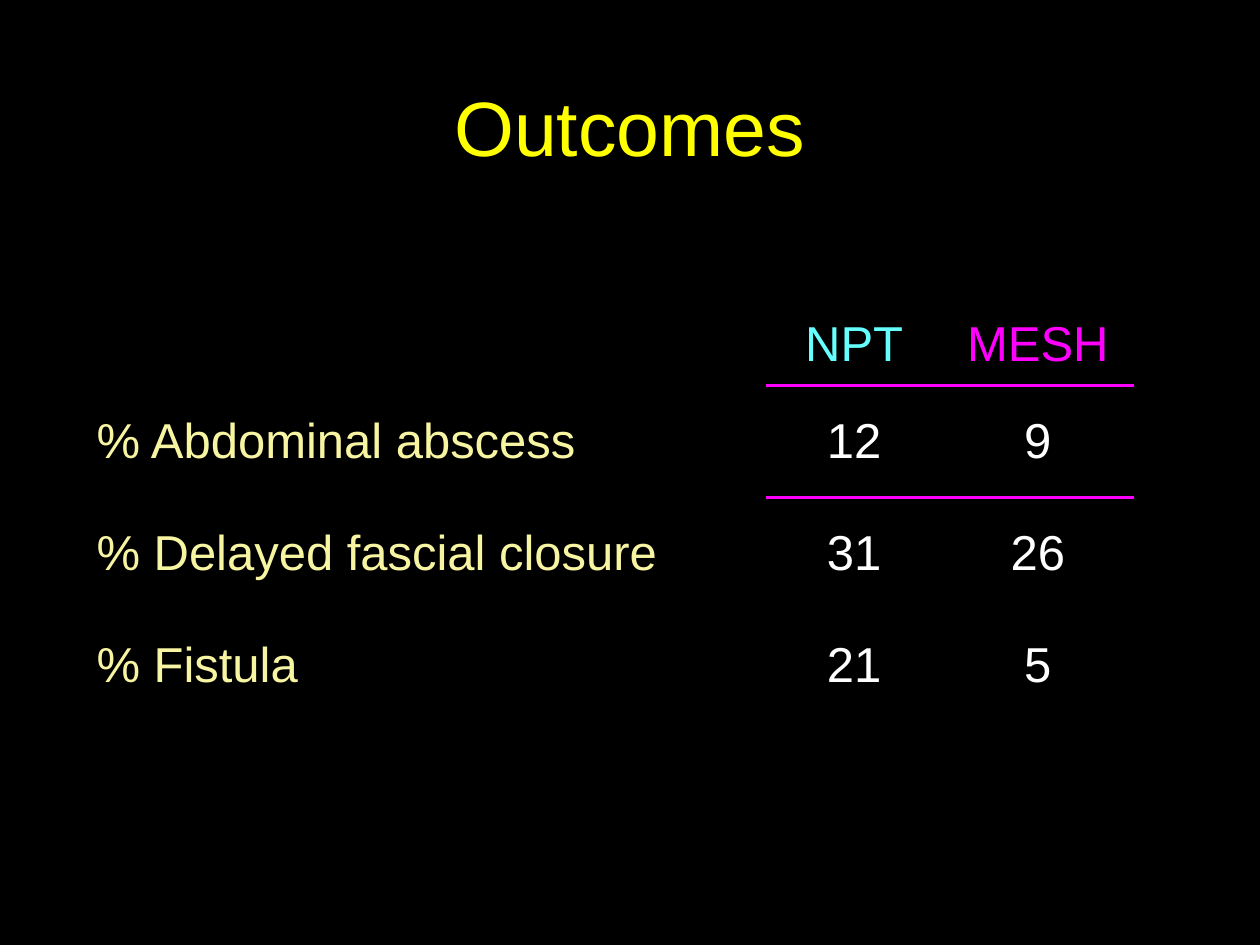
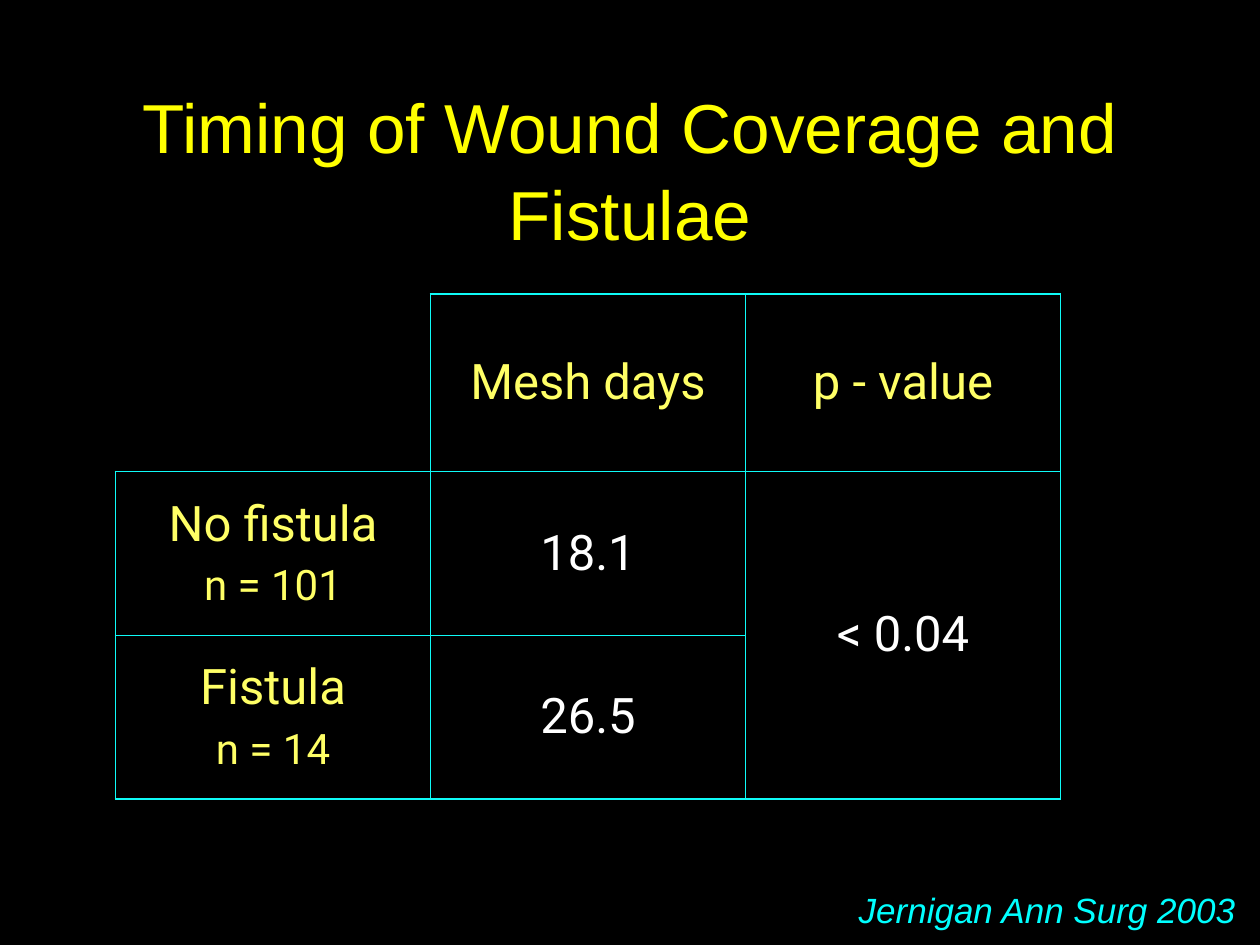
from lxml import etree
from pptx import Presentation
from pptx.dml.color import RGBColor
from pptx.enum.text import MSO_ANCHOR, PP_ALIGN
from pptx.oxml.ns import qn
from pptx.util import Inches, Pt

LEFT, CENTER = PP_ALIGN.LEFT, PP_ALIGN.CENTER
TOP, MIDDLE = MSO_ANCHOR.TOP, MSO_ANCHOR.MIDDLE

COLORS = {
    "background": "000000",
    "title": "FFFF00",
    "npt": "66FFFF",
    "mesh": "FF00FF",
    "outcome": "F8F5A2",
    "heading": "FFFF66",
    "value": "FFFFFF",
    "grid": "0FFBF7",
    "citation": "00FFFF",
}
FONT = "Arial"
TABLE_FONT = "Roboto"
PLAIN_TABLE_STYLE = "{2D5ABB26-0587-4C30-8999-92F81FD0307C}"
ALL_SIDES = "LRTB"
BLANK_LAYOUT = 6


def grid(units):
    return Inches(units / 12)


def write_text(frame, text, size=28, color="value", font=FONT, align=CENTER,
               italic=False, anchor=MIDDLE, line_spacing=None, small_size=24):
    frame.vertical_anchor = anchor
    for index, line in enumerate(text.split("\n")):
        paragraph = frame.add_paragraph() if index else frame.paragraphs[0]
        paragraph.alignment = align
        paragraph.line_spacing = line_spacing
        line_size = small_size if index else size
        paragraph.space_before = Pt(round(0.2 * line_size) if index else 0)
        run = paragraph.add_run()
        run.text = line
        run.font.name = font
        run.font.size = Pt(line_size)
        run.font.italic = italic
        run.font.color.rgb = RGBColor.from_string(COLORS[color])


def add_text(slide, text, left, top, width, height, wrap=True, **text_format):
    shape = slide.shapes.add_textbox(*map(grid, (left, top, width, height)))
    shape.text_frame.word_wrap = wrap
    write_text(shape.text_frame, text, **text_format)
    return shape


def add_title(slide, text, left, top, width, size, **text_format):
    shape = add_text(slide, text, left, top, width, 15, size=size,
                     color="title", **text_format)
    frame = shape.text_frame
    frame.margin_left = frame.margin_right = Inches(0.2)
    frame.margin_top = Inches(0.12)


def add_slide(presentation):
    slide = presentation.slides.add_slide(presentation.slide_layouts[BLANK_LAYOUT])
    fill = slide.background.fill
    fill.solid()
    fill.fore_color.rgb = RGBColor.from_string(COLORS["background"])
    return slide


def add_plain_table(slide, left, top, columns, rows):
    frame = slide.shapes.add_table(len(rows), len(columns), grid(left), grid(top),
                                   grid(sum(columns)), grid(sum(rows)))
    table = frame.table
    table.first_row = table.horz_banding = False
    style = frame.element.find(".//" + qn("a:tableStyleId"))
    style.text = PLAIN_TABLE_STYLE
    for column, width in zip(table.columns, columns):
        column.width = grid(width)
    for row, height in zip(table.rows, rows):
        row.height = grid(height)
    return table


def set_borders(cell, sides, color, width):
    properties = cell._tc.get_or_add_tcPr()
    for side in ALL_SIDES:
        if side in sides:
            line = etree.SubElement(properties, qn("a:ln" + side), w=str(Pt(width)))
            solid = etree.SubElement(line, qn("a:solidFill"))
            etree.SubElement(solid, qn("a:srgbClr"), val=COLORS[color])


def fill_cell(cell, text, sides="", line_color="grid", line_width=1, **text_format):
    set_borders(cell, sides, line_color, line_width)
    cell.fill.background()
    cell.vertical_anchor = MIDDLE
    if text:
        write_text(cell.text_frame, text, **text_format)


def add_outcomes_slide(presentation):
    slide = add_slide(presentation)
    add_title(slide, "Outcomes", 9, 4, 102, size=44)
    outcomes = [
        ("", "NPT", "MESH"),
        ("% Abdominal abscess", "12", "9"),
        ("% Delayed fascial closure", "31", "26"),
        ("% Fistula", "21", "5"),
    ]
    header_colors = ("outcome", "npt", "mesh")
    rule_sides = {0: "B", 1: "T"}
    table = add_plain_table(slide, 8, 29, (65, 16.7, 18.3), (7.7,) + (10.67,) * 3)
    for row, texts in enumerate(outcomes):
        for column, text in enumerate(texts):
            is_label = column == 0
            color = header_colors[column] if is_label or row == 0 else "value"
            fill_cell(table.cell(row, column), text,
                      sides="" if is_label else rule_sides.get(row, ""),
                      line_color="mesh", line_width=2.25, color=color,
                      align=LEFT if is_label else CENTER)


def add_timing_slide(presentation):
    slide = add_slide(presentation)
    add_title(slide, "Timing of Wound Coverage and Fistulae", 0, 8, 120,
              size=39.6, line_spacing=1.05)
    mesh_days = [
        ("", "Mesh days", "p - value"),
        ("No fistula\nn = 101", "18.1", "< 0.04"),
        ("Fistula\nn = 14", "26.5", ""),
    ]
    table = add_plain_table(slide, 11, 28, (30,) * 3, (16.9, 15.6, 15.6))
    table.cell(1, 2).merge(table.cell(2, 2))
    for row, texts in enumerate(mesh_days):
        for column, text in enumerate(texts):
            is_heading = row == 0 or column == 0
            fill_cell(table.cell(row, column), text,
                      sides="RB" if row == column == 0 else ALL_SIDES,
                      color="heading" if is_heading else "value", font=TABLE_FONT)
    add_text(slide, "Jernigan Ann Surg 2003", 80.6, 84, 39.4, 5.3, wrap=False,
             size=20, color="citation", italic=True, align=LEFT, anchor=TOP)


def main():
    presentation = Presentation()
    presentation.slide_width = grid(120)
    presentation.slide_height = grid(90)
    add_outcomes_slide(presentation)
    add_timing_slide(presentation)
    presentation.save("out.pptx")


if __name__ == "__main__":
    main()
